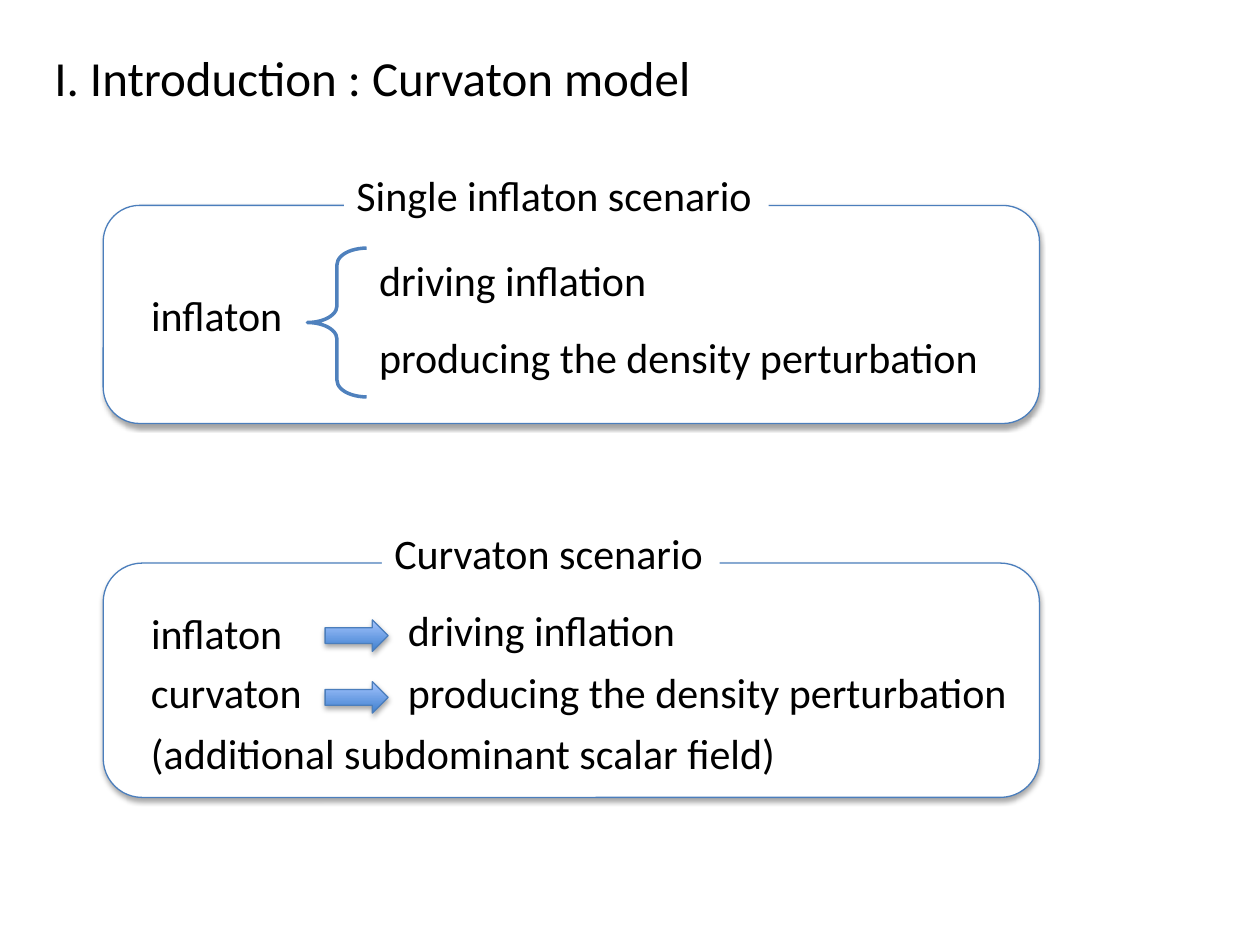
from dataclasses import dataclass
from lxml.etree import SubElement
from pptx import Presentation
from pptx.dml.color import RGBColor
from pptx.enum.shapes import MSO_SHAPE
from pptx.enum.text import MSO_ANCHOR, MSO_AUTO_SIZE, PP_ALIGN
from pptx.oxml.ns import qn
from pptx.util import Pt


@dataclass(frozen=True)
class Theme:
    font: str = "Calibri"
    title_size: int = 28
    body_size: int = 24
    text: RGBColor = RGBColor(0x00, 0x00, 0x00)
    paper: RGBColor = RGBColor(0xFF, 0xFF, 0xFF)
    outline: RGBColor = RGBColor(0x4B, 0x7E, 0xBC)
    brace: RGBColor = RGBColor(0x4F, 0x81, 0xBD)
    arrow_dark: RGBColor = RGBColor(0x3F, 0x80, 0xCE)
    arrow_light: RGBColor = RGBColor(0xA4, 0xC4, 0xFF)


THEME = Theme()
TITLE_BOX = (23.8, 23.8, 378.7, 41)
SINGLE_BOX = (59, 117.4, 535, 124.6)
CURVATON_BOX = (59, 321.8, 535, 133.9)
LINE_HEIGHT = 36
SUBJECT_INDENT = 20.2


def style_text(paragraph, size):
    paragraph.alignment = PP_ALIGN.LEFT
    font = paragraph.font
    font.name, font.size, font.color.rgb = THEME.font, Pt(size), THEME.text


def add_shadow(shape):
    """Give the shape a soft shadow that falls straight down."""
    shape.shadow.inherit = False
    effects = shape._element.spPr.find(qn("a:effectLst"))
    outer = SubElement(effects, qn("a:outerShdw"), blurRad=str(Pt(3.1)),
                       dist=str(Pt(1.8)), dir="5400000", rotWithShape="0")
    color = SubElement(outer, qn("a:srgbClr"), val="000000")
    SubElement(color, qn("a:alpha"), val="35000")


def add_label(slide, lines, left, top, width, space_after=None):
    label = slide.shapes.add_textbox(Pt(left), Pt(top), Pt(width),
                                     Pt(LINE_HEIGHT * len(lines)))
    frame = label.text_frame
    frame.word_wrap = False
    frame.auto_size = MSO_AUTO_SIZE.SHAPE_TO_FIT_TEXT
    frame.text = "\n".join(lines)
    for paragraph in frame.paragraphs:
        style_text(paragraph, THEME.body_size)
        if space_after:
            paragraph.space_after = Pt(space_after)
    return label


def add_panel(slide, box, caption, caption_indent, caption_width):
    """Draw a rounded frame whose top edge is interrupted by its caption."""
    left, top, width, height = box
    panel = slide.shapes.add_shape(MSO_SHAPE.ROUNDED_RECTANGLE, Pt(left), Pt(top),
                                   Pt(width), Pt(height))
    panel.fill.solid()
    panel.fill.fore_color.rgb = THEME.paper
    panel.line.color.rgb = THEME.outline
    panel.line.width = Pt(0.75)
    add_shadow(panel)
    heading = add_label(slide, [caption], left + caption_indent, top - 24, caption_width)
    heading.fill.solid()
    heading.fill.fore_color.rgb = THEME.paper


def add_brace(slide, left, top, width, height):
    brace = slide.shapes.add_shape(MSO_SHAPE.LEFT_BRACE, Pt(left), Pt(top),
                                   Pt(width), Pt(height))
    brace.adjustments[0] = 0.28
    brace.fill.background()
    brace.line.color.rgb = THEME.brace
    brace.line.width = Pt(2)
    brace.shadow.inherit = False


def add_arrow(slide, left, top):
    arrow = slide.shapes.add_shape(MSO_SHAPE.RIGHT_ARROW, Pt(left), Pt(top), Pt(36), Pt(18))
    arrow.fill.gradient()
    arrow.fill.gradient_angle = 90
    for stop, color, position in zip(arrow.fill.gradient_stops,
                                     (THEME.arrow_dark, THEME.arrow_light), (0, 1)):
        stop.color.rgb = color
        stop.position = position
    arrow.line.color.rgb = THEME.outline
    arrow.line.width = Pt(0.75)
    add_shadow(arrow)


def add_title(slide, text, box):
    title = slide.shapes.title
    title.left, title.top, title.width, title.height = map(Pt, box)
    frame = title.text_frame
    frame.text = text
    frame.word_wrap = False
    frame.auto_size = MSO_AUTO_SIZE.SHAPE_TO_FIT_TEXT
    frame.vertical_anchor = MSO_ANCHOR.TOP
    style_text(frame.paragraphs[0], THEME.title_size)


def add_single_scenario(slide, box, roles):
    left, top = box[:2]
    add_panel(slide, box, "Single inflaton scenario", 137.6, 242.6)
    add_label(slide, ["inflaton"], left + SUBJECT_INDENT, top + 44.6, 90)
    add_brace(slide, left + 116.7, top + 24.4, 33.8, 85)
    for row, (role, width) in enumerate(roles):
        add_label(slide, [role], left + 150.5, top + 24.4 + 44 * row, width)


def add_curvaton_scenario(slide, box, roles):
    left, top = box[:2]
    row_step = 35.3
    add_panel(slide, box, "Curvaton scenario", 159.2, 193)
    add_label(slide, ["inflaton"], left + SUBJECT_INDENT, top + 21.6, 90)
    add_label(slide, ["curvaton", "(additional subdominant scalar field)"],
              left + SUBJECT_INDENT, top + 55.5, 380, space_after=6)
    for row, (role, width) in enumerate(roles):
        row_top = top + 20.2 + row_step * row
        add_label(slide, [role], left + 167, row_top, width)
        add_arrow(slide, left + 126.8, row_top + 12.2)


def main():
    presentation = Presentation()
    presentation.slide_width, presentation.slide_height = Pt(720), Pt(540)
    slide = presentation.slides.add_slide(presentation.slide_layouts.get_by_name("Title Only"))
    roles = [("driving inflation", 169.2), ("producing the density perturbation", 360.7)]
    add_title(slide, "I. Introduction : Curvaton model", TITLE_BOX)
    add_single_scenario(slide, SINGLE_BOX, roles)
    add_curvaton_scenario(slide, CURVATON_BOX, roles)
    presentation.save("out.pptx")


if __name__ == "__main__":
    main()
